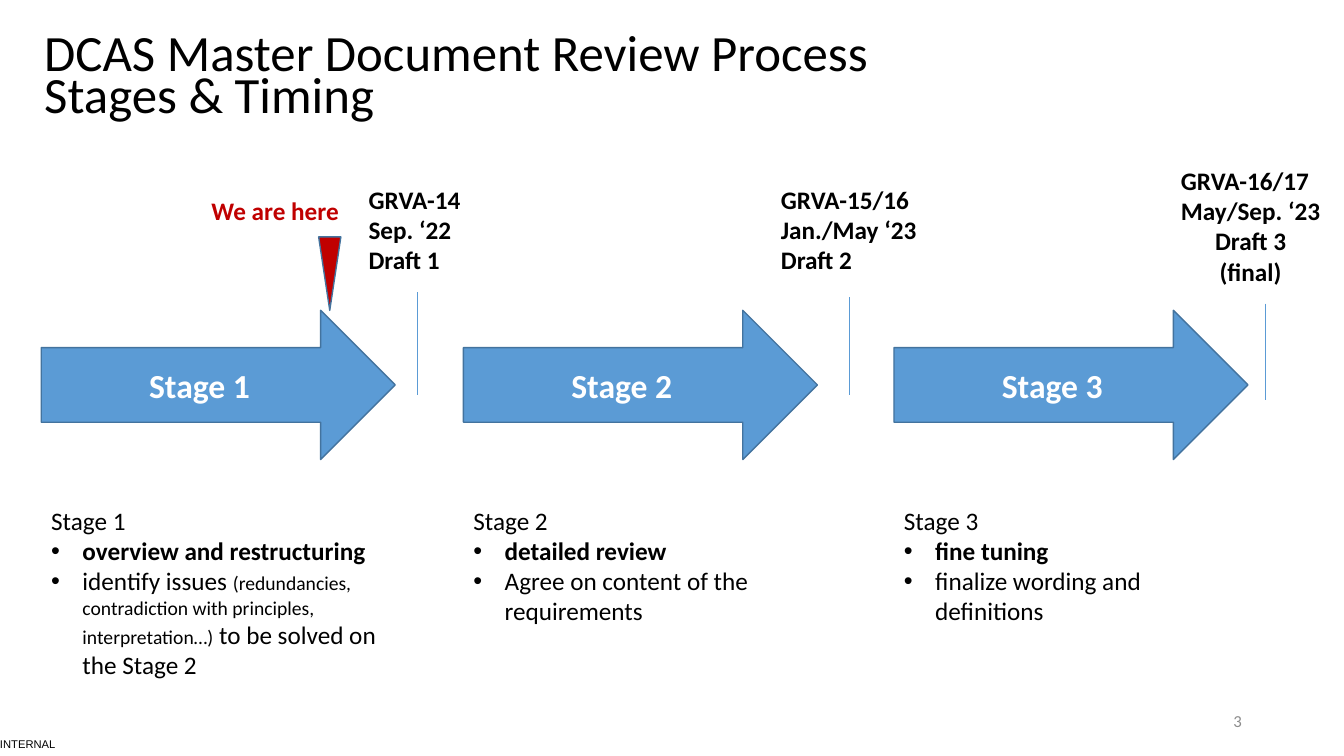
"""Build the DCAS review process slide with its three stages and milestones."""

from copy import deepcopy
from dataclasses import dataclass

from lxml.etree import SubElement
from pptx import Presentation
from pptx.dml.color import RGBColor
from pptx.enum.shapes import MSO_CONNECTOR as Connector, MSO_SHAPE as Preset
from pptx.enum.text import MSO_ANCHOR as Anchor, MSO_AUTO_SIZE as AutoSize, PP_ALIGN as Align
from pptx.oxml.ns import qn
from pptx.util import Cm, Pt


@dataclass(frozen=True)
class Theme:
    """Colours, fonts and type sizes of the slide."""
    black: str = "000000"
    white: str = "FFFFFF"
    grey: str = "8C8C8C"
    red: str = "C00000"
    blue: str = "5B9BD5"
    outline: str = "43739E"
    font: str = "Calibri"
    label_font: str = "Arial"
    title: float = 36.3
    stage: float = 24
    body: float = 18
    detail: float = 14
    number: float = 12
    label: float = 8


THEME = Theme()


@dataclass(frozen=True)
class Style:
    """Character formatting."""
    size: float = THEME.body
    bold: bool = False
    color: str = THEME.black
    font: str = THEME.font


BODY = Style()
STRONG = Style(bold=True)
DETAIL = Style(THEME.detail)


@dataclass(frozen=True)
class Box:
    """Left, top, width and height in centimetres."""
    left: float
    top: float
    width: float
    height: float

    def emu(self) -> tuple:
        """Return the box as slide lengths."""
        return Cm(self.left), Cm(self.top), Cm(self.width), Cm(self.height)


@dataclass(frozen=True)
class Line:
    """A paragraph made of (text, style) spans."""
    spans: tuple
    bullet: bool = False
    align: Align = Align.LEFT


@dataclass(frozen=True)
class Milestone:
    """A dated draft and the tick that marks it."""
    box: Box
    lines: tuple
    tick_x: float
    tick_top: float
    tick_bottom: float


@dataclass(frozen=True)
class Stage:
    """A stage arrow, its description and its milestone."""
    name: str
    left: float
    description_height: float
    points: tuple
    milestone: Milestone


def plain(text: str, style: Style = BODY, align: Align = Align.LEFT) -> Line:
    """Make a paragraph with a single span."""
    return Line(((text, style),), align=align)


def point(*spans: tuple) -> Line:
    """Make a bulleted paragraph."""
    return Line(spans, bullet=True)


STAGES = (
    Stage("Stage 1", 1.04, 4.88,
          (point(("overview and restructuring", STRONG)),
           point(("identify issues ", BODY),
                 ("(redundancies, contradiction with principles, interpretation…)", DETAIL),
                 (" to be solved on the Stage 2", BODY))),
          Milestone(Box(9.04, 4.52, 3, 2.57),
                    (plain("GRVA-14", STRONG), plain("Sep. ‘22", STRONG),
                     plain("Draft 1", STRONG)),
                    10.52, 7.37, 9.96)),
    Stage("Stage 2", 11.68, 3.33,
          (point(("detailed review", STRONG)),
           point(("Agree on content of the requirements", BODY))),
          Milestone(Box(19.43, 4.52, 3.96, 2.57),
                    (plain("GRVA-15/16", STRONG), plain("Jan./May ‘23", STRONG),
                     plain("Draft 2", STRONG)),
                    21.41, 7.49, 9.96)),
    Stage("Stage 3", 22.53, 3.33,
          (point(("fine tuning", STRONG)),
           point(("finalize wording and definitions", BODY))),
          Milestone(Box(29.51, 4.04, 4.06, 3.33),
                    (plain("GRVA-16/17", STRONG), plain("May/Sep. ‘23", STRONG),
                     plain("Draft 3", STRONG, Align.CENTER),
                     plain("(final)", STRONG, Align.CENTER)),
                    31.9, 7.65, 10.08)),
)


def format_run(run, style: Style) -> None:
    """Apply a style to a run."""
    run.font.name = style.font
    run.font.size = Pt(style.size)
    run.font.bold = style.bold
    run.font.color.rgb = RGBColor.from_string(style.color)


def write(frame, lines: tuple) -> None:
    """Fill a text frame with paragraphs."""
    for index, line in enumerate(lines):
        paragraph = frame.add_paragraph() if index else frame.paragraphs[0]
        paragraph.alignment = line.align
        if line.bullet:
            properties = paragraph._p.get_or_add_pPr()
            properties.set("marL", str(Cm(0.79)))
            properties.set("indent", str(-Cm(0.79)))
            SubElement(properties, qn("a:buFont"), typeface=THEME.label_font)
            SubElement(properties, qn("a:buChar"), char="•")
        for text, style in line.spans:
            run = paragraph.add_run()
            run.text = text
            format_run(run, style)


def add_text(slide, box: Box, lines: tuple, wrap: bool = True, grow: bool = True):
    """Add a text box and return its frame."""
    frame = slide.shapes.add_textbox(*box.emu()).text_frame
    frame.word_wrap = wrap
    frame.auto_size = AutoSize.SHAPE_TO_FIT_TEXT if grow else AutoSize.NONE
    write(frame, lines)
    return frame


def add_preset(slide, preset: Preset, box: Box, fill: str):
    """Add a filled and outlined preset shape."""
    shape = slide.shapes.add_shape(preset, *box.emu())
    shape.shadow.inherit = False
    shape.fill.solid()
    shape.fill.fore_color.rgb = RGBColor.from_string(fill)
    shape.line.color.rgb = RGBColor.from_string(THEME.outline)
    shape.line.width = Pt(1)
    return shape


def add_title(slide) -> None:
    """Place and format the title."""
    title = slide.shapes.title
    title.left, title.top, title.width, title.height = Box(0.86, 0.71, 31.78, 2.59).emu()
    frame = title.text_frame
    frame.auto_size = AutoSize.NONE
    frame.vertical_anchor = Anchor.MIDDLE
    paragraph = frame.paragraphs[0]
    paragraph.text = "DCAS Master Document Review Process \nStages & Timing"
    paragraph.alignment = Align.LEFT
    paragraph.line_spacing = 0.7
    for run in paragraph.runs:
        format_run(run, Style(THEME.title))
    for line_break in paragraph._p.findall(qn("a:br")):
        line_break.append(deepcopy(paragraph.runs[0].font._element))


def add_stage(slide, stage: Stage) -> None:
    """Draw one stage with its milestone."""
    arrow = add_preset(slide, Preset.RIGHT_ARROW, Box(stage.left, 7.82, 8.92, 3.76), THEME.blue)
    arrow.text_frame.vertical_anchor = Anchor.MIDDLE
    write(arrow.text_frame,
          (plain(stage.name, Style(THEME.stage, True, THEME.white), Align.CENTER),))
    add_text(slide, Box(stage.left, 12.6, 8.92, stage.description_height),
             (plain(stage.name), *stage.points))
    milestone = stage.milestone
    add_text(slide, milestone.box, milestone.lines, wrap=False)
    x = Cm(milestone.tick_x)
    tick = slide.shapes.add_connector(Connector.STRAIGHT, x, Cm(milestone.tick_top),
                                      x, Cm(milestone.tick_bottom))
    tick.line.color.rgb = RGBColor.from_string(THEME.blue)
    tick.line.width = Pt(0.5)
    SubElement(tick._element.spPr, qn("a:effectLst"))


def main() -> None:
    """Build and save the slide."""
    deck = Presentation()
    deck.slide_width, deck.slide_height = Cm(33.87), Cm(19.05)
    slide = deck.slides.add_slide(deck.slide_layouts[5])
    add_title(slide)
    label = add_text(slide, Box(0, 18.44, 2.06, 0.61),
                     (plain("INTERNAL", Style(THEME.label, font=THEME.label_font)),))
    label.margin_left = label.margin_top = label.margin_right = label.margin_bottom = 0
    label.vertical_anchor = Anchor.MIDDLE
    number = add_text(slide, Box(23.93, 17.65, 7.62, 1.02),
                      (plain("3", Style(THEME.number, color=THEME.grey), Align.RIGHT),), grow=False)
    number.vertical_anchor = Anchor.MIDDLE
    for stage in STAGES:
        add_stage(slide, stage)
    pointer = add_preset(slide, Preset.ISOSCELES_TRIANGLE, Box(8.03, 5.97, 0.56, 1.85), THEME.red)
    pointer.rotation = 180
    add_text(slide, Box(5.08, 4.8, 3.76, 1.02),
             (plain("We are here", Style(bold=True, color=THEME.red)),), wrap=False)
    deck.save("out.pptx")


if __name__ == "__main__":
    main()
